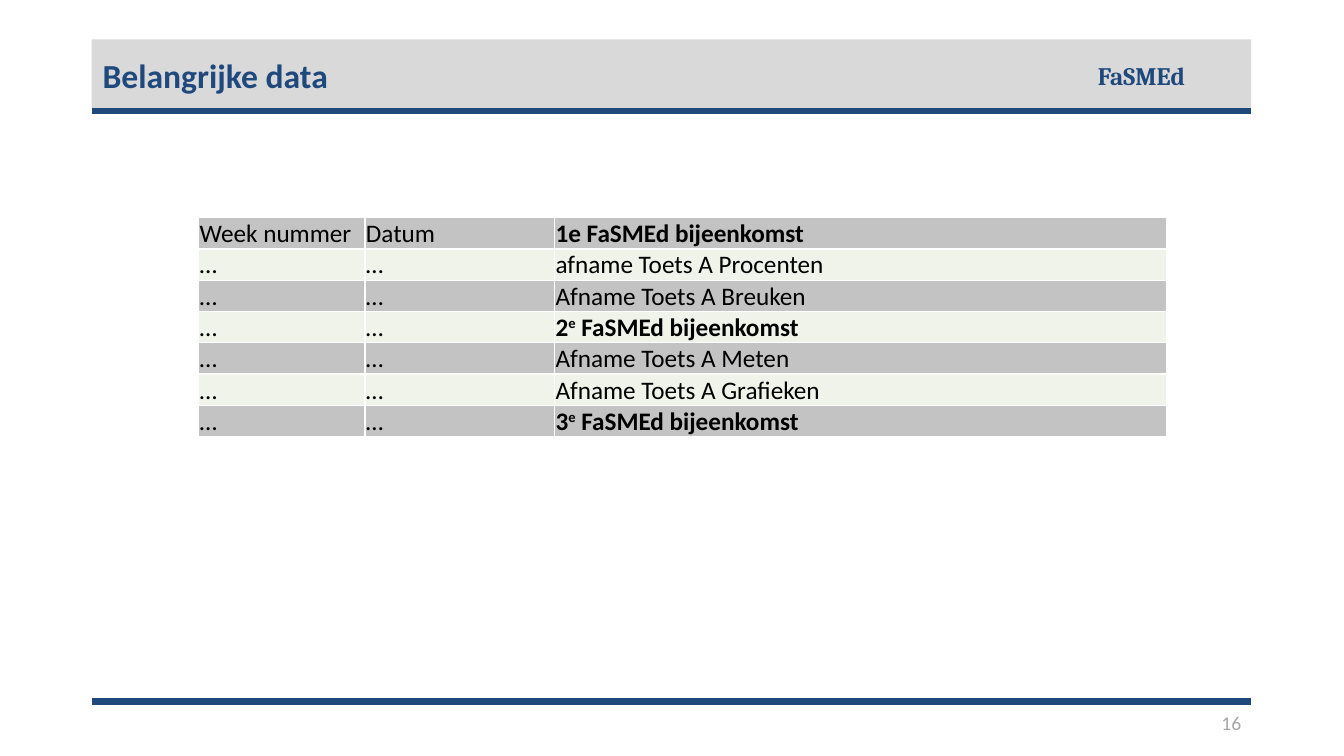
from lxml import etree
from pptx import Presentation
from pptx import util as u
from pptx.dml.color import RGBColor
from pptx.enum import shapes, text
from pptx.oxml.ns import qn

W, H = 13.33, 7.5
LEFT, WIDTH = 0.91, 11.5
COLORS = {"navy": "1F497D", "band": "D9D9D9", "number": "A6A6A6", "ink": "000000",
          "odd": "C3C3C3", "even": "EFF3EA", "border": "FFFFFF"}
COLUMNS = [1.65, 1.88, 6.07]
ROW_H = 0.31
EVENTS = ["1e FaSMEd bijeenkomst", "afname Toets A Procenten", "Afname Toets A Breuken",
          "2^e^ FaSMEd bijeenkomst", "Afname Toets A Meten", "Afname Toets A Grafieken",
          "3^e^ FaSMEd bijeenkomst"]


def rgb(name):
    return RGBColor.from_string(COLORS[name])


def write(tf, content, size=18, font="Calibri", color="ink", bold=False,
          align=text.PP_ALIGN.LEFT, spacing=None):
    """Fill the first paragraph; text between carets is superscript."""
    p = tf.paragraphs[0]
    p.alignment = align
    if spacing:
        p.line_spacing = spacing
    for i, part in enumerate(content.split("^")):
        r = p.add_run()
        r.text = part
        r.font.size, r.font.name, r.font.bold = u.Pt(size), font, bold
        r.font.color.rgb = rgb(color)
        if i % 2:
            r._r.get_or_add_rPr().set("baseline", "30000")


def add_text(s, box, content, anchor=text.MSO_ANCHOR.MIDDLE, wrap=True, **fmt):
    tf = s.shapes.add_textbox(*map(u.Inches, box)).text_frame
    tf.word_wrap = wrap
    tf.vertical_anchor = anchor
    write(tf, content, **fmt)


def add_rule(s, x, y, w):
    ln = s.shapes.add_connector(shapes.MSO_CONNECTOR.STRAIGHT,
                                *map(u.Inches, (x, y, x + w, y)))
    ln.line.color.rgb = rgb("navy")
    ln.line.width = u.Pt(4.5)
    etree.SubElement(ln._element.spPr, qn("a:effectLst"))


def add_header(s, x, y, w, h):
    sp = s.shapes.add_shape(shapes.MSO_SHAPE.RECTANGLE, *map(u.Inches, (x, y, w, h)))
    sp.shadow.inherit = False
    sp.fill.solid()
    sp.fill.fore_color.rgb = rgb("band")
    sp.line.fill.background()
    add_rule(s, x, y + h + 0.02, w)
    add_text(s, (x + w - 1.62, y + 0.16, 1.11, 0.4), "FaSMEd", font="Cambria",
             color="navy", bold=True, anchor=text.MSO_ANCHOR.TOP, wrap=False)
    add_text(s, (x + 0.01, y + 0.02, w, h + 0.02), "Belangrijke data", size=24,
             color="navy", bold=True, spacing=0.9)


def add_footer(s, x, y, w):
    add_rule(s, x, y, w)
    add_text(s, (x + w - 1.97, y + 0.04, 1.97, 0.34), "16", size=14, color="number",
             align=text.PP_ALIGN.RIGHT)


def style_cell(cell, fill):
    cell.margin_left = cell.margin_right = cell.margin_top = u.Inches(0.01)
    cell.margin_bottom = 0
    tcPr = cell._tc.get_or_add_tcPr()
    for side in ("lnL", "lnR", "lnT", "lnB"):
        ln = etree.SubElement(tcPr, qn(f"a:{side}"), w=str(u.Pt(1)))
        solid = etree.SubElement(ln, qn("a:solidFill"))
        etree.SubElement(solid, qn("a:srgbClr"), val=COLORS["border"])
    cell.fill.solid()
    cell.fill.fore_color.rgb = rgb(fill)


def add_schedule(s, x, y):
    rows = [("…", "…", event) for event in EVENTS]
    rows[0] = ("Week nummer", "Datum", EVENTS[0])
    box = (x, y, sum(COLUMNS), ROW_H * len(rows))
    table = s.shapes.add_table(len(rows), len(COLUMNS), *map(u.Inches, box)).table
    for column, width in zip(table.columns, COLUMNS):
        column.width = u.Inches(width)
    for i, row in enumerate(rows):
        for j, content in enumerate(row):
            cell = table.cell(i, j)
            style_cell(cell, "even" if i % 2 else "odd")
            write(cell.text_frame, content, bold="bijeenkomst" in content)


def main():
    prs = Presentation()
    prs.slide_width, prs.slide_height = u.Inches(W), u.Inches(H)
    s = prs.slides.add_slide(prs.slide_layouts[6])
    add_footer(s, LEFT, 6.96, WIDTH)
    add_header(s, LEFT, 0.39, WIDTH, 0.69)
    add_schedule(s, 1.97, 2.16)
    prs.save("out.pptx")


if __name__ == "__main__":
    main()
